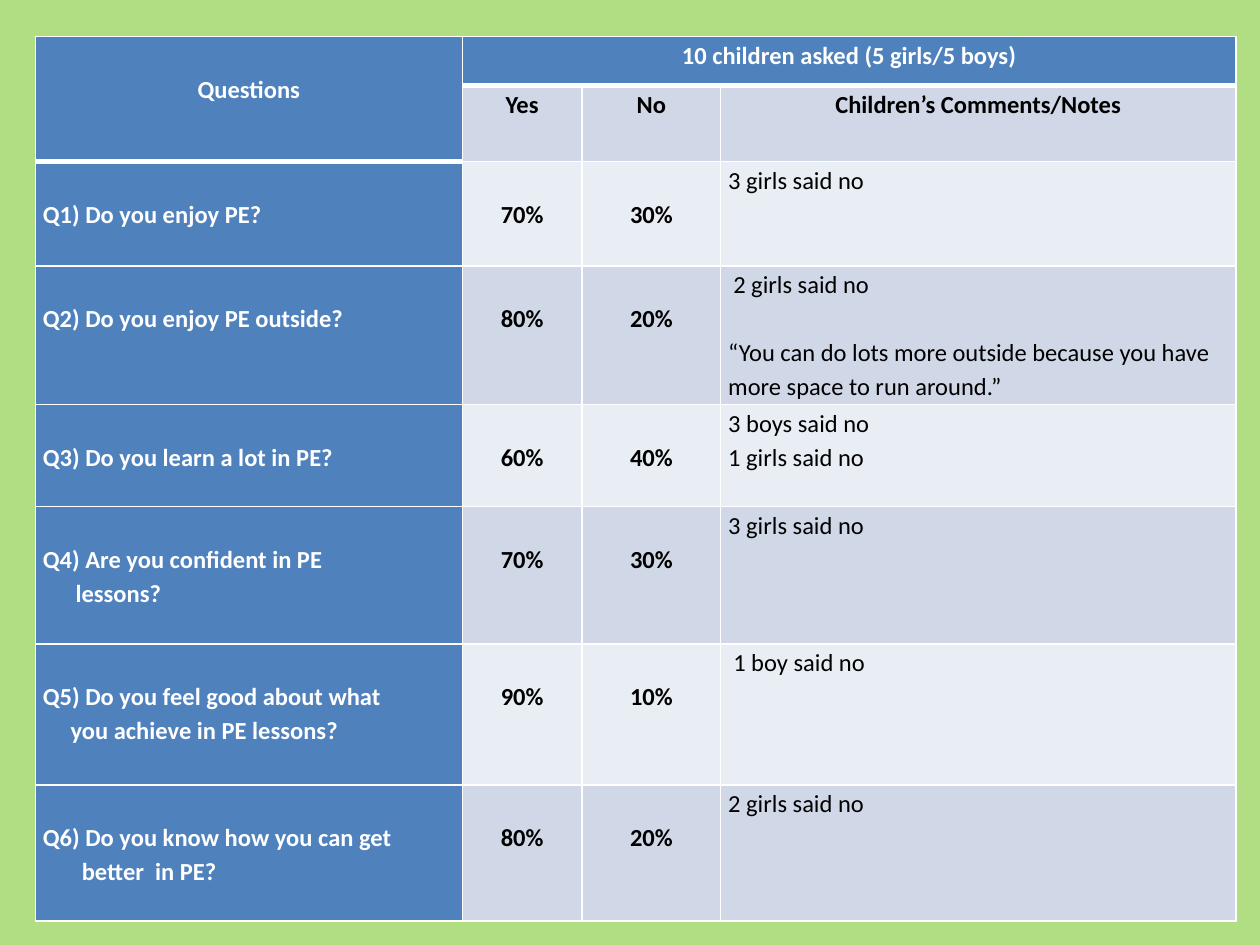
from dataclasses import dataclass

from lxml.etree import SubElement as Sub
from pptx import Presentation
from pptx.dml.color import RGBColor as Rgb
from pptx.enum.text import MSO_ANCHOR as Anchor, PP_ALIGN as Align
from pptx.oxml.ns import qn
from pptx.util import Inches, Pt

BACK, BLUE, WHITE, BLACK = "B2DE83", "4F81BD", "FFFFFF", "000000"
BANDS = ("E9EDF4", "D0D8E8")
LINE = 0.27  # height of one text line, in inches
WIDTHS = (3.39, 0.95, 1.1, 4.09)
HEIGHTS = (0.39, 0.6, 0.83, 1.1, 0.81, 1.09, 1.12, 1.08)


@dataclass
class Line:
    text: str
    indent: float = 0
    before: float = 0


@dataclass
class Survey:
    ask: list[Line]
    yes: int
    notes: list[Line]


SURVEY = [
    Survey([Line("Q1) Do you enjoy PE?")], 70, [Line("3 girls said no")]),
    Survey([Line("Q2) Do you enjoy PE outside?")], 80,
           [Line("2 girls said no", 0.04),
            Line("“You can do lots more outside because you have "
                 "more space to run around.”", before=LINE)]),
    Survey([Line("Q3) Do you learn a lot in PE?")], 60,
           [Line("3 boys said no"), Line("1 girls said no")]),
    Survey([Line("Q4) Are you confident in PE"), Line("lessons?", 0.26)], 70,
           [Line("3 girls said no")]),
    Survey([Line("Q5) Do you feel good about what"),
            Line("you achieve in PE lessons?", 0.22)], 90,
           [Line("1 boy said no", 0.04)]),
    Survey([Line("Q6) Do you know how you can get"),
            Line("better  in PE?", 0.31)], 80, [Line("2 girls said no")]),
]


def color(code: str) -> Rgb:
    return Rgb.from_string(code)


def border(cell, top: float = 1, bottom: float = 1) -> None:
    props = cell._tc.get_or_add_tcPr()
    for side, width in (("L", 1), ("R", 1), ("T", top), ("B", bottom)):
        edge = Sub(props, qn(f"a:ln{side}"), w=str(Pt(width)))
        fill = Sub(edge, qn("a:solidFill"))
        Sub(fill, qn("a:srgbClr"), val=WHITE)


def write(cell, lines: list[Line], *, fill: str, ink: str = BLACK,
          bold: bool = True, align=Align.LEFT, drop: float = 0) -> None:
    cell.fill.solid()
    cell.fill.fore_color.rgb = color(fill)
    cell.vertical_anchor = Anchor.TOP
    cell.margin_left = cell.margin_right = Inches(0.06)
    cell.margin_top, cell.margin_bottom = Inches(drop), 0
    frame = cell.text_frame
    for i, line in enumerate(lines):
        para = frame.add_paragraph() if i else frame.paragraphs[0]
        para.alignment, para.line_spacing = align, 1.15
        if line.before:
            para.space_before = Pt(round(line.before * 72))
        if line.indent:
            para._p.get_or_add_pPr().set("marL", str(Inches(line.indent)))
        run = para.add_run()
        run.text = line.text
        font = run.font
        font.name, font.size, font.bold = "Calibri", Pt(14), bold
        font.color.rgb = color(ink)


def main() -> None:
    deck = Presentation()
    deck.slide_width, deck.slide_height = Inches(10), Inches(7.5)
    slide = deck.slides.add_slide(deck.slide_layouts[6])
    slide.background.fill.solid()
    slide.background.fill.fore_color.rgb = color(BACK)

    # Grid and borders: thick rules close the header cells
    table = slide.shapes.add_table(
        len(HEIGHTS), len(WIDTHS), Inches(0.28), Inches(0.29),
        Inches(sum(WIDTHS)), Inches(sum(HEIGHTS))).table
    table.first_row = table.horz_banding = False
    for col, width in zip(table.columns, WIDTHS):
        col.width = Inches(width)
    for row, height in zip(table.rows, HEIGHTS):
        row.height = Inches(height)
    for r in range(len(HEIGHTS)):
        for c in range(len(WIDTHS)):
            end = 1 if c == 0 else 0  # last header row of this column
            border(table.cell(r, c), top=3 if r == end + 1 else 1,
                   bottom=3 if r == end else 1)
    table.cell(0, 0).merge(table.cell(1, 0))
    table.cell(0, 1).merge(table.cell(0, 3))

    # Header
    head = dict(fill=BLUE, ink=WHITE, align=Align.CENTER)
    write(table.cell(0, 0), [Line("Questions")], drop=LINE, **head)
    write(table.cell(0, 1), [Line("10 children asked (5 girls/5 boys)")], **head)
    for c, name in enumerate(("Yes", "No", "Children’s Comments/Notes"), 1):
        write(table.cell(1, c), [Line(name)], fill=BANDS[1], align=Align.CENTER)

    # Questions with answers
    for i, item in enumerate(SURVEY):
        ask, yes, no, notes = table.rows[i + 2].cells
        band = BANDS[i % 2]
        write(ask, item.ask, fill=BLUE, ink=WHITE, drop=LINE)
        for cell, share in ((yes, item.yes), (no, 100 - item.yes)):
            write(cell, [Line(f"{share}%")], fill=band, align=Align.CENTER,
                  drop=LINE)
        write(notes, item.notes, fill=band, bold=False)

    deck.save("out.pptx")


if __name__ == "__main__":
    main()
